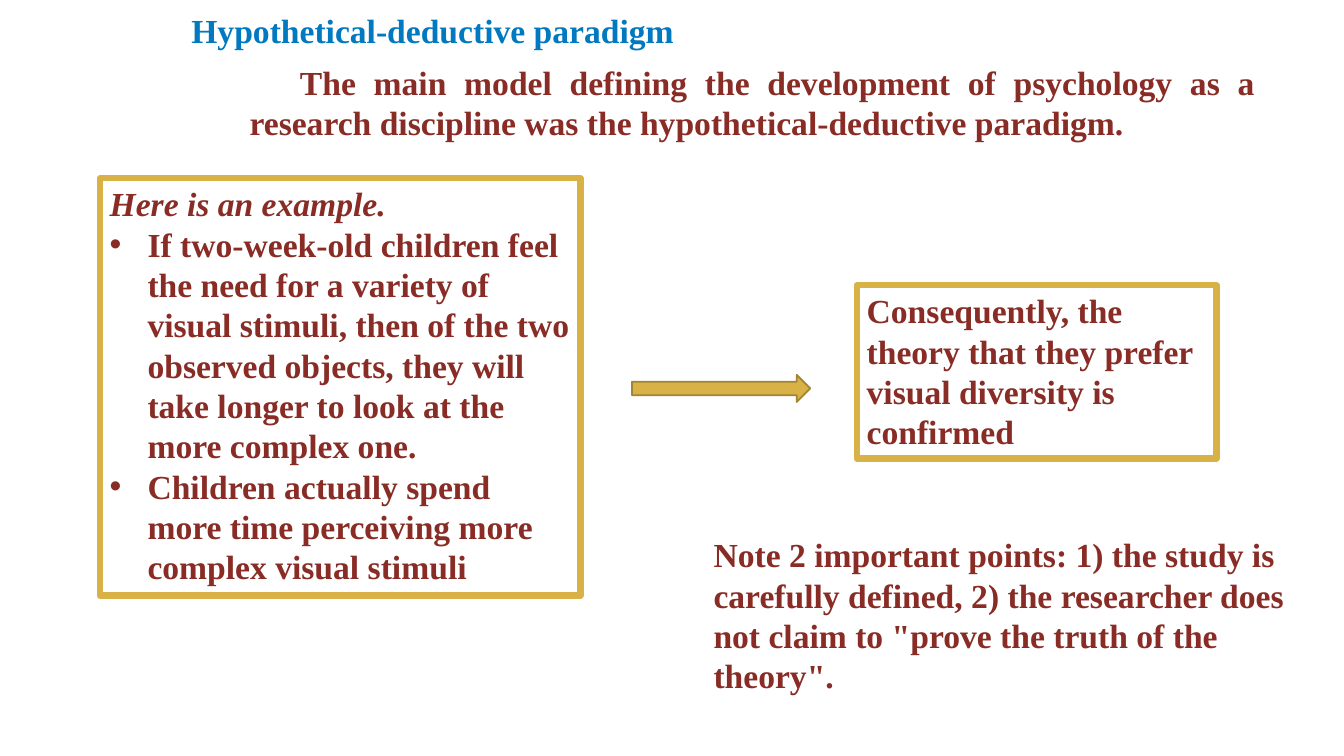
from lxml.etree import SubElement
from pptx import Presentation
from pptx.dml.color import RGBColor
from pptx.enum.shapes import MSO_SHAPE
from pptx.enum.text import MSO_AUTO_SIZE, PP_ALIGN
from pptx.oxml.ns import qn
from pptx.util import Pt

BLUE = RGBColor(0x01, 0x79, 0xC0)
MAROON = RGBColor(0x88, 0x2C, 0x25)
GOLD = RGBColor(0xD9, 0xB2, 0x47)
DARK_GOLD = RGBColor(0xA1, 0x84, 0x35)
FONT = "Times New Roman"
TEXT_SIZE = Pt(24)
BULLET_INDENT = Pt(27)
FIRST_LINE_INDENT = Pt(36)


def add_box(page, left, top, width, height, wrap=True):
    box = page.shapes.add_textbox(Pt(left), Pt(top), Pt(width), Pt(height))
    box.text_frame.word_wrap = wrap
    box.text_frame.auto_size = MSO_AUTO_SIZE.SHAPE_TO_FIT_TEXT
    return box


def add_frame(page, left, top, width, height):
    box = add_box(page, left, top, width, height)
    box.line.color.rgb = GOLD
    box.line.width = Pt(4.5)
    return box


def add_text(para, text, color=MAROON, italic=False):
    span = para.add_run()
    span.text = text
    span.font.name = FONT
    span.font.size = TEXT_SIZE
    span.font.bold = True
    span.font.italic = italic
    span.font.color.rgb = color


def add_bullet(box, text):
    para = box.text_frame.add_paragraph()
    properties = para._p.get_or_add_pPr()
    properties.set("marL", str(BULLET_INDENT))
    properties.set("indent", str(-BULLET_INDENT))
    SubElement(properties, qn("a:buFont")).set("typeface", "Arial")
    SubElement(properties, qn("a:buChar")).set("char", "•")
    add_text(para, text)


def add_arrow(page, left, top, width, height):
    arrow = page.shapes.add_shape(
        MSO_SHAPE.RIGHT_ARROW, Pt(left), Pt(top), Pt(width), Pt(height)
    )
    arrow.shadow.inherit = False
    arrow.fill.solid()
    arrow.fill.fore_color.rgb = GOLD
    arrow.line.color.rgb = DARK_GOLD
    arrow.line.width = Pt(1.25)


def main():
    deck = Presentation()
    deck.slide_width, deck.slide_height = Pt(960), Pt(540)
    page = deck.slides.add_slide(deck.slide_layouts[6])

    title = add_box(page, 129.6, 3.6, 360.7, 36, wrap=False)
    add_text(title.text_frame.paragraphs[0], "Hypothetical-deductive paradigm", BLUE)

    intro = add_box(page, 171.2, 40.3, 732.2, 65.5)
    para = intro.text_frame.paragraphs[0]
    para.alignment = PP_ALIGN.JUSTIFY
    para._p.get_or_add_pPr().set("indent", str(FIRST_LINE_INDENT))
    add_text(
        para,
        "The main model defining the development of psychology as a research "
        "discipline was the hypothetical-deductive paradigm.",
    )

    example = add_frame(page, 71.3, 127.4, 343.4, 298)
    add_text(example.text_frame.paragraphs[0], "Here is an example.", italic=True)
    add_bullet(
        example,
        "If two-week-old children feel the need for a variety of visual stimuli, "
        "then of the two observed objects, they will take longer to look at the "
        "more complex one.",
    )
    add_bullet(
        example,
        "Children actually spend more time perceiving more complex visual stimuli",
    )

    add_arrow(page, 451.4, 267.8, 127.4, 19.4)

    conclusion = add_frame(page, 612, 203.8, 257, 123.8)
    add_text(
        conclusion.text_frame.paragraphs[0],
        "Consequently, the theory that they prefer visual diversity is confirmed",
    )

    note = add_box(page, 502.6, 378, 434.2, 123.8)
    add_text(
        note.text_frame.paragraphs[0],
        "Note 2 important points: 1) the study is carefully defined, 2) the "
        'researcher does not claim to "prove the truth of the theory".',
    )

    deck.save("out.pptx")


if __name__ == "__main__":
    main()
